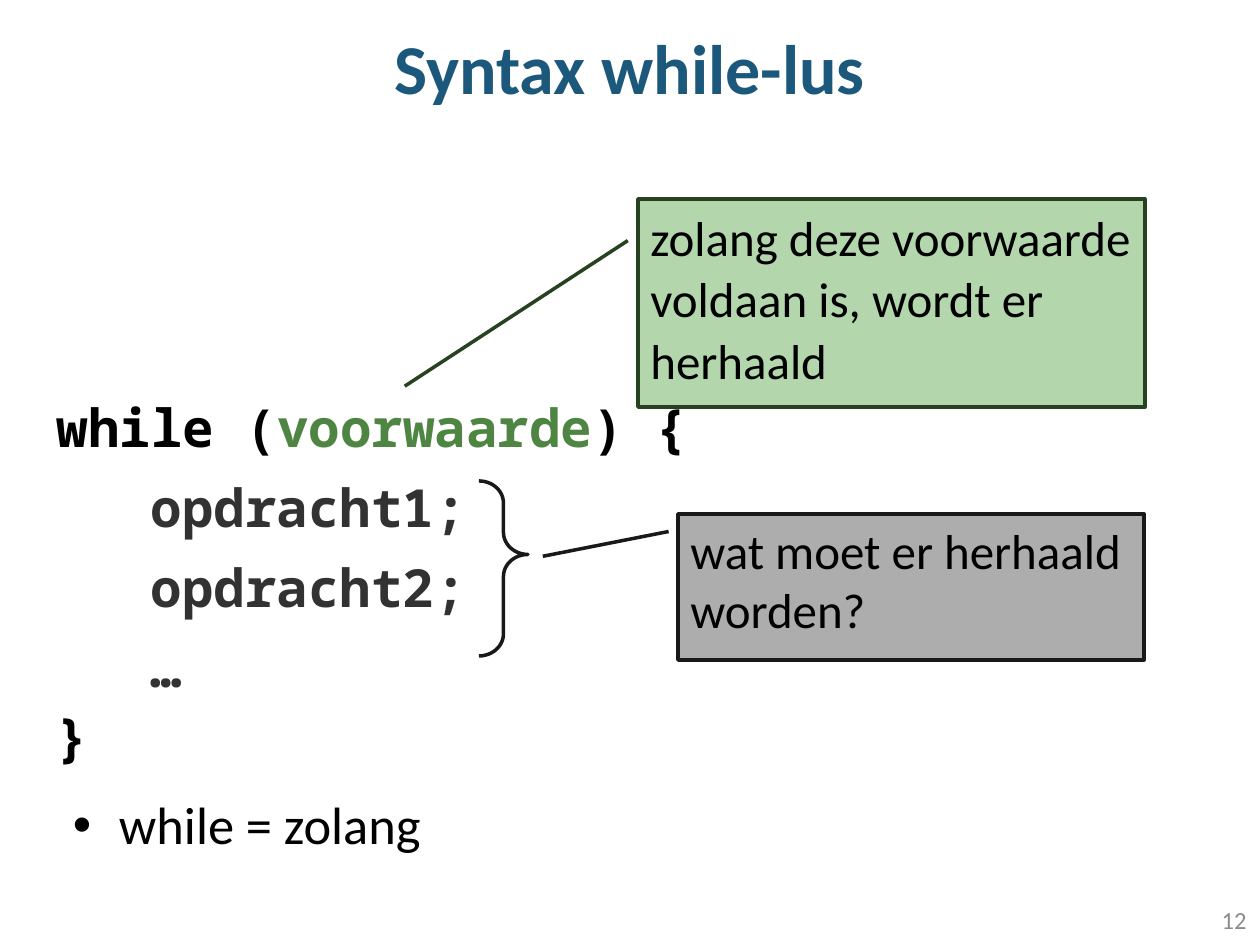
from lxml.etree import SubElement
from pptx import Presentation
from pptx.dml.color import RGBColor
from pptx.enum.shapes import MSO_SHAPE
from pptx.enum.text import MSO_ANCHOR, PP_ALIGN
from pptx.oxml.ns import qn
from pptx.util import Pt

PX = 914400 // 126
COLORS = {
    "title": "1B587C", "code": "000000", "condition": "4E8542",
    "statement": "323232", "number": "8C8C8C", "dark": "191919",
    "green_fill": "B3D6AC", "green_line": "274221", "gray_fill": "ADADAD",
}


def add_run(paragraph, text, size, color, font="Calibri", bold=False):
    run = paragraph.add_run()
    run.text = text
    run.font.name = font
    run.font.size = Pt(size)
    run.font.bold = bold
    run.font.color.rgb = RGBColor.from_string(COLORS[color])


def add_outlined(preset, box, adjustments, line):
    shape = slide.shapes.add_shape(preset, *(n * PX for n in box))
    shape.shadow.inherit = False
    for i, value in enumerate(adjustments):
        shape.adjustments[i] = value
    shape.line.color.rgb = RGBColor.from_string(COLORS[line])
    shape.line.width = Pt(2)
    return shape


prs = Presentation()
prs.slide_width, prs.slide_height = 1260 * PX, 945 * PX
slide = prs.slides.add_slide(prs.slide_layouts[6])

# Title and slide number
for box, text, size, color, bold, align in [
    ((0, 0, 1259, 144), "Syntax while-lus", 40, "title", True, PP_ALIGN.CENTER),
    ((975, 897, 284, 50), "12", 14, "number", False, PP_ALIGN.RIGHT),
]:
    frame = slide.shapes.add_textbox(*(n * PX for n in box)).text_frame
    frame.word_wrap = True
    frame.vertical_anchor = MSO_ANCHOR.MIDDLE
    frame.paragraphs[0].alignment = align
    frame.paragraphs[0].line_spacing = 0.9
    add_run(frame.paragraphs[0], text, size, color, bold=bold)

# Code with the explanation below it
code = slide.shapes.add_textbox(57 * PX, 402 * PX, 1190 * PX, 480 * PX).text_frame
code.word_wrap = True
code.margin_left = code.margin_top = code.margin_right = code.margin_bottom = 0
code_lines = [
    [("while (", "code"), ("voorwaarde", "condition"), (") {", "code")],
    [("opdracht1;", "statement")],
    [("opdracht2;", "statement")],
    [("…", "statement")],
    [("}", "code")],
]
for i, parts in enumerate(code_lines):
    line = code.add_paragraph() if i else code.paragraphs[0]
    line.space_before = Pt(7.5 if i else 0)
    is_statement = parts[0][1] == "statement"
    line.line_spacing = Pt(38) if is_statement else 0.9
    if is_statement:
        line._p.get_or_add_pPr().set("marL", str(94 * PX))
    for text, color in parts:
        add_run(line, text, 30, color, "Noto Sans Mono", True)

meaning = code.add_paragraph()
meaning.space_before = Pt(18)
meaning.line_spacing = 0.9
properties = meaning._p.get_or_add_pPr()
properties.set("marL", str(62 * PX))
properties.set("indent", str(-46 * PX))
SubElement(properties, qn("a:buFont")).set("typeface", "Arial")
SubElement(properties, qn("a:buChar")).set("char", "•")
add_run(meaning, "while = zolang", 30, "code")

# Brace around the statements, and the two callouts
brace = add_outlined(MSO_SHAPE.RIGHT_BRACE, (479, 481, 49, 175), (0.45, 0.42), "dark")
brace.fill.background()

for box, adjustments, fill, line, spacing, text in [
    ((638, 199, 507, 208), (0.2, -0.02, 0.9, -0.46), "green_fill", "green_line",
     Pt(35), "zolang deze voorwaarde voldaan is, wordt er herhaald"),
    ((678, 514, 466, 146), (0.12, -0.02, 0.29, -0.29), "gray_fill", "dark",
     1.0, "wat moet er herhaald worden?"),
]:
    callout = add_outlined(MSO_SHAPE.LINE_CALLOUT_1, box, adjustments, line)
    callout.fill.solid()
    callout.fill.fore_color.rgb = RGBColor.from_string(COLORS[fill])
    frame = callout.text_frame
    frame.word_wrap = True
    frame.vertical_anchor = MSO_ANCHOR.TOP
    frame.paragraphs[0].alignment = PP_ALIGN.LEFT
    frame.paragraphs[0].line_spacing = spacing
    add_run(frame.paragraphs[0], text, 28, "code")

prs.save("out.pptx")
